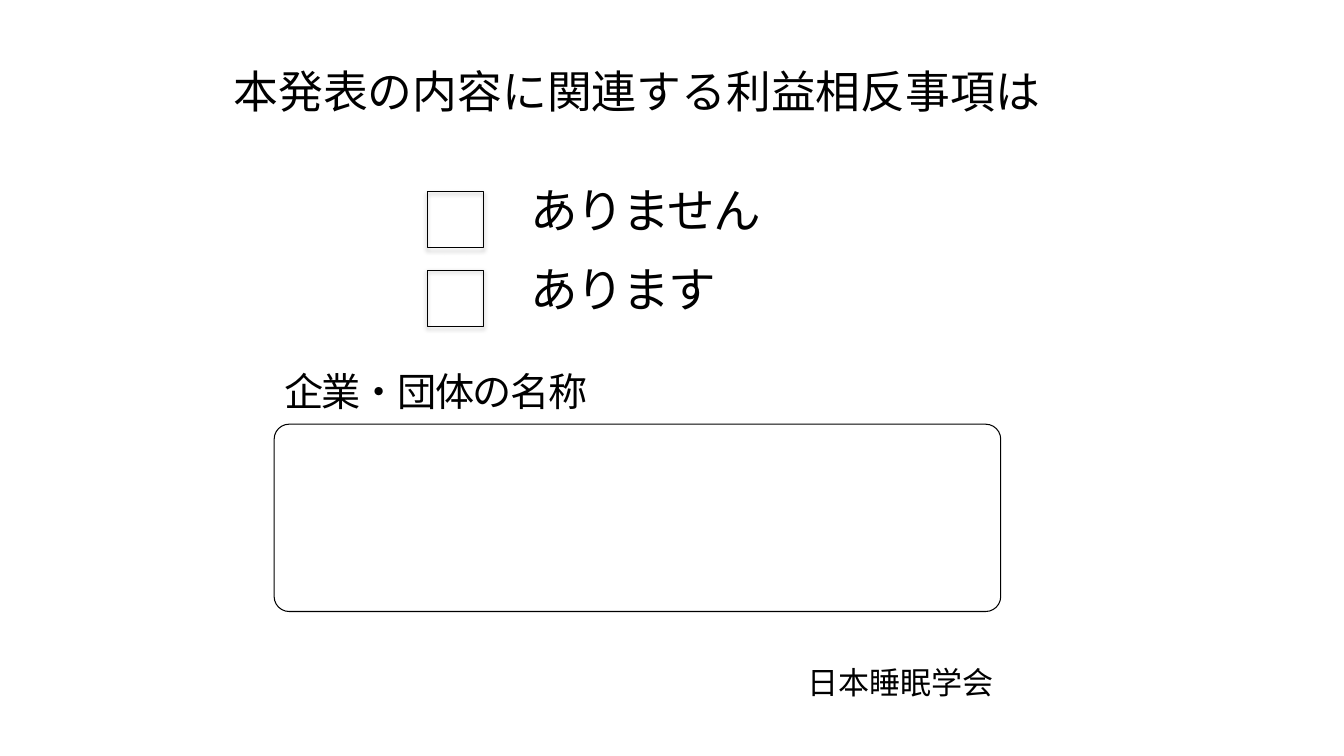
from lxml import etree
from pptx import Presentation
from pptx import util as u
from pptx.dml.color import RGBColor
from pptx.enum import shapes, text
from pptx.oxml.ns import qn

# Content: wording, then left, top, width, height in cm
INK = "000000"
LATIN, JAPANESE = "Calibri", "Noto Sans CJK JP"
QUESTION = ("本発表の内容に関連する利益相反事項は", (5.21, 1.63, 21.69, 1.88))
ANSWERS = ["ありません", "あります"]
NAME_LABEL = ("企業・団体の名称", (6.91, 9.27, 8.59, 1.4))
SOCIETY = ("日本睡眠学会", (17.86, 16.69, 9.68, 1.04))
NAME_FIELD = (6.91, 10.69, 18.31, 4.72)

# Answer rows
BOX_LEFT, BOX_TOP, BOX_SIZE = 10.77, 4.83, 1.42
ANSWER_LEFT, ANSWER_WIDTH, ANSWER_HEIGHT = 13.11, 8.61, 1.86
ROW_STEP = 1.98

deck = Presentation()
deck.slide_width, deck.slide_height = u.Cm(33.87), u.Cm(19.05)
slide = deck.slides.add_slide(deck.slide_layouts[6])


def color(hex_string):
    return RGBColor.from_string(hex_string)


def add_words(words, place, size, font=LATIN, centered=False, spacing=0):
    frame = slide.shapes.add_textbox(*map(u.Cm, place)).text_frame
    frame.word_wrap = True
    paragraph = frame.paragraphs[0]
    paragraph.line_spacing = 0.9
    paragraph.alignment = text.PP_ALIGN.CENTER if centered else text.PP_ALIGN.LEFT
    run = paragraph.add_run()
    run.text = words
    run.font.size = u.Pt(size)
    run.font.name = font
    run.font.color.rgb = color(INK)
    properties = run.font._element
    etree.SubElement(properties, qn("a:ea"), typeface=font)
    if spacing:
        properties.set("spc", str(spacing * 100))


def add_outline(kind, place):
    outline = slide.shapes.add_shape(kind, *map(u.Cm, place))
    outline.shadow.inherit = False
    outline.fill.background()
    outline.line.color.rgb = color(INK)
    outline.line.width = u.Pt(0.75)
    return outline


def add_shadow(box):
    effects = box._element.spPr.find(qn("a:effectLst"))
    shadow = etree.SubElement(
        effects, qn("a:outerShdw"), blurRad=str(u.Pt(3.1)), dist=str(u.Pt(1.8)),
        dir="5400000", rotWithShape="0")
    shade = etree.SubElement(shadow, qn("a:srgbClr"), val=INK)
    etree.SubElement(shade, qn("a:alpha"), val="35000")


# Question and society
add_words(*QUESTION, 32, centered=True)
add_words(*SOCIETY, 22.2, font=JAPANESE, centered=True)

# Check boxes with their answers
for row, answer in enumerate(ANSWERS):
    top = BOX_TOP + row * ROW_STEP
    add_shadow(add_outline(shapes.MSO_SHAPE.RECTANGLE,
                           (BOX_LEFT, top, BOX_SIZE, BOX_SIZE)))
    answer_top = top + (BOX_SIZE - ANSWER_HEIGHT) / 2
    add_words(answer, (ANSWER_LEFT, answer_top, ANSWER_WIDTH, ANSWER_HEIGHT),
              34, spacing=-1)

# Field for company names
add_words(*NAME_LABEL, 28, spacing=-1)
name_field = add_outline(shapes.MSO_SHAPE.ROUNDED_RECTANGLE, NAME_FIELD)
name_field.adjustments[0] = 0.08

deck.save("out.pptx")
